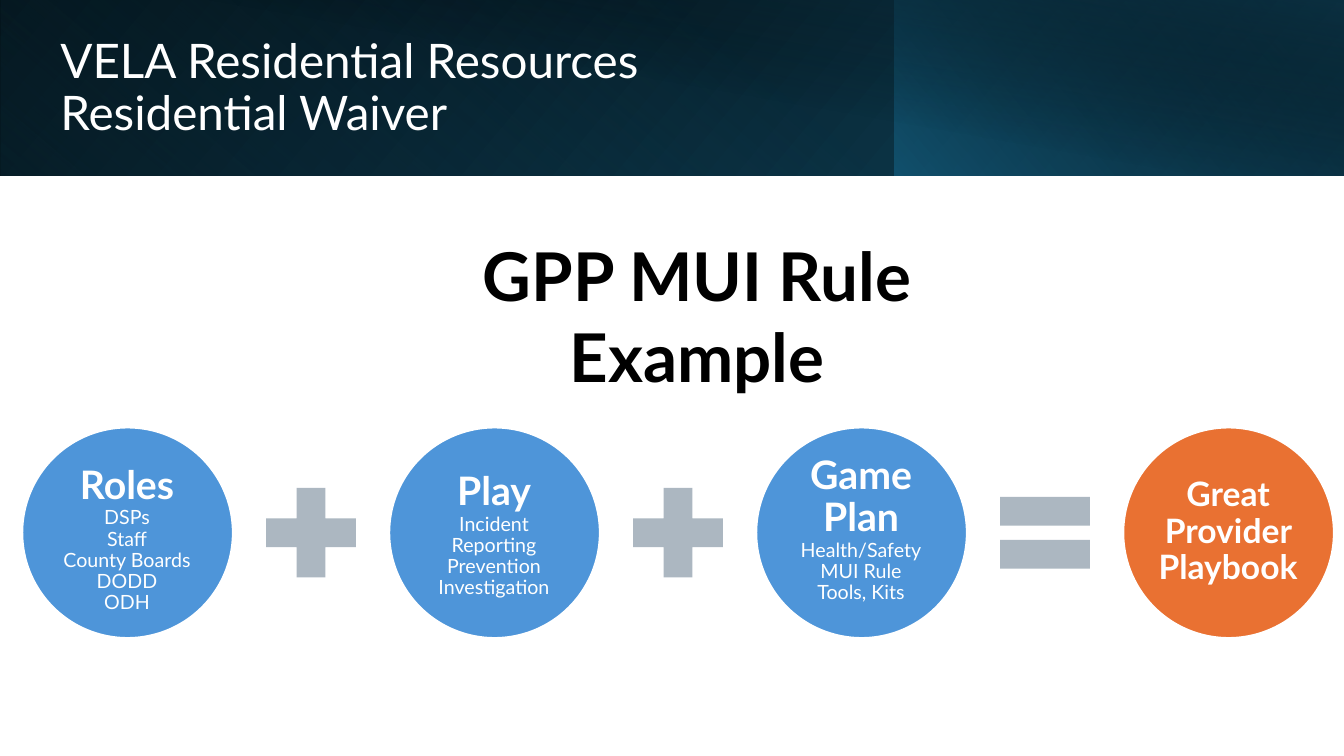
from dataclasses import dataclass

from lxml.etree import SubElement
from pptx import Presentation
from pptx.dml.color import RGBColor
from pptx.enum.shapes import MSO_SHAPE
from pptx.enum.text import MSO_ANCHOR, PP_ALIGN
from pptx.oxml.ns import qn
from pptx.shapes.autoshape import Shape
from pptx.slide import Slide
from pptx.util import Emu, Pt

EMU_PER_PX = 9144


@dataclass(frozen=True)
class Theme:
    font: str = "Lato"
    white: str = "FFFFFF"
    black: str = "000000"
    ocean: str = "156082"
    deep_ocean: str = "104862"
    midnight: str = "0B3041"
    blue: str = "4E95D9"
    orange: str = "E97132"
    grey: str = "ACB7C1"
    title_size: int = 34
    headline_size: int = 48
    term_size: int = 28
    result_size: int = 24
    detail_size: int = 14


THEME = Theme()


@dataclass(frozen=True)
class Box:
    left: int
    top: int
    width: int
    height: int

    def emu(self) -> tuple[Emu, ...]:
        lengths = (self.left, self.top, self.width, self.height)
        return tuple(Emu(length * EMU_PER_PX) for length in lengths)


@dataclass(frozen=True)
class Stop:
    position: float
    color: str
    opacity: int = 100


@dataclass(frozen=True)
class BannerLayer:
    box: Box
    stops: tuple[Stop, Stop]
    angle: int
    rotation: int = 0
    flipped: bool = True


@dataclass(frozen=True)
class Line:
    text: str
    size: int
    color: str = THEME.white
    bold: bool = False


@dataclass(frozen=True)
class Term:
    heading: Line
    details: tuple[str, ...]
    text_top: int
    fill: str = THEME.blue


BANNER_LAYERS = (
    BannerLayer(Box(0, 0, 1333, 174),
                (Stop(0, THEME.black), Stop(1, THEME.deep_ocean)), 220),
    BannerLayer(Box(0, 0, 888, 174),
                (Stop(0.2, THEME.ocean, 0), Stop(1, THEME.midnight, 55)), 130, rotation=180),
    BannerLayer(Box(887, 0, 446, 174),
                (Stop(0, THEME.ocean, 66), Stop(1, THEME.black, 30)), 140),
    BannerLayer(Box(50, 0, 1283, 174),
                (Stop(0.5, THEME.black, 0), Stop(0.99, THEME.midnight, 52)), 80, flipped=False),
)

TERMS = (
    Term(Line("Roles", THEME.term_size, bold=True),
         ("DSPs", "Staff", "County Boards", "DODD", "ODH"), 462),
    Term(Line("Play", THEME.term_size, bold=True),
         ("Incident", "Reporting", "Prevention", "Investigation"), 468),
    Term(Line("Game Plan", THEME.term_size, bold=True),
         ("Health/Safety", "MUI Rule", "Tools, Kits"), 452),
    Term(Line("Great Provider Playbook", THEME.result_size, bold=True),
         (), 474, THEME.orange),
)
OPERATORS = (MSO_SHAPE.MATH_PLUS, MSO_SHAPE.MATH_PLUS, MSO_SHAPE.MATH_EQUAL)

FIRST_CIRCLE = Box(22, 424, 209, 209)
FIRST_OPERATOR = Box(248, 468, 121, 121)
TERM_PITCH = 364
TEXT_INDENT = 30
TEXT_WIDTH = 148
TEXT_HEIGHT = 148


def add_plain_shape(slide: Slide, kind: MSO_SHAPE, box: Box) -> Shape:
    shape = slide.shapes.add_shape(kind, *box.emu())
    shape.shadow.inherit = False
    shape.line.fill.background()
    return shape


def add_solid_shape(slide: Slide, kind: MSO_SHAPE, box: Box, color: str) -> Shape:
    shape = add_plain_shape(slide, kind, box)
    shape.fill.solid()
    shape.fill.fore_color.rgb = RGBColor.from_string(color)
    return shape


def add_banner_layer(slide: Slide, layer: BannerLayer) -> None:
    shape = add_plain_shape(slide, MSO_SHAPE.RECTANGLE, layer.box)
    shape.rotation = layer.rotation
    shape.fill.gradient()
    shape.fill.gradient_angle = layer.angle
    for gradient_stop, stop in zip(shape.fill.gradient_stops, layer.stops):
        gradient_stop.position = stop.position
        gradient_stop.color.rgb = RGBColor.from_string(stop.color)
    # Opacity and mirroring are only reachable through XML
    properties = shape.element.spPr
    for color, stop in zip(properties.iter(qn("a:srgbClr")), layer.stops):
        SubElement(color, qn("a:alpha"), val=str(stop.opacity * 1000))
    if layer.flipped:
        properties.find(qn("a:xfrm")).set("flipH", "1")


def add_text(slide: Slide, box: Box, lines: list[Line], alignment: PP_ALIGN,
             anchor: MSO_ANCHOR = MSO_ANCHOR.TOP, spacing: float = 0.9,
             inset: int | None = None) -> None:
    frame = slide.shapes.add_textbox(*box.emu()).text_frame
    frame.word_wrap = True
    frame.vertical_anchor = anchor
    if inset is not None:
        margin = Emu(inset * EMU_PER_PX)
        frame.margin_left = frame.margin_right = margin
        frame.margin_top = frame.margin_bottom = Emu(0)
    for index, line in enumerate(lines):
        paragraph = frame.add_paragraph() if index else frame.paragraphs[0]
        paragraph.text = line.text
        paragraph.alignment = alignment
        paragraph.line_spacing = spacing
        paragraph.font.name = THEME.font
        paragraph.font.size = Pt(line.size)
        paragraph.font.bold = line.bold
        paragraph.font.color.rgb = RGBColor.from_string(line.color)


def add_term(slide: Slide, term: Term, offset: int) -> None:
    left = FIRST_CIRCLE.left + offset
    circle_box = Box(left, FIRST_CIRCLE.top, FIRST_CIRCLE.width, FIRST_CIRCLE.height)
    circle = add_solid_shape(slide, MSO_SHAPE.OVAL, circle_box, term.fill)
    circle.line.color.rgb = RGBColor.from_string(THEME.white)
    circle.line.width = Pt(1.5)
    lines = [term.heading, *(Line(detail, THEME.detail_size) for detail in term.details)]
    text_box = Box(left + TEXT_INDENT, term.text_top, TEXT_WIDTH, TEXT_HEIGHT)
    add_text(slide, text_box, lines, PP_ALIGN.CENTER, inset=3)


def main() -> None:
    presentation = Presentation()
    presentation.slide_width = Emu(1333 * EMU_PER_PX)
    presentation.slide_height = Emu(750 * EMU_PER_PX)
    slide = presentation.slides.add_slide(presentation.slide_layouts[6])

    # Banner and title
    for layer in BANNER_LAYERS:
        add_banner_layer(slide, layer)
    title = [Line(text, THEME.title_size)
             for text in ("VELA Residential Resources", "Residential Waiver")]
    add_text(slide, Box(50, 32, 1182, 113), title, PP_ALIGN.LEFT, MSO_ANCHOR.MIDDLE)

    # Headline
    headline = Line("GPP MUI Rule Example", THEME.headline_size, THEME.black, bold=True)
    add_text(slide, Box(381, 228, 621, 172), [headline], PP_ALIGN.CENTER, spacing=1.0)

    # Equation of circles and operators
    for index, term in enumerate(TERMS):
        add_term(slide, term, index * TERM_PITCH)
    for index, operator in enumerate(OPERATORS):
        left = FIRST_OPERATOR.left + index * TERM_PITCH
        box = Box(left, FIRST_OPERATOR.top, FIRST_OPERATOR.width, FIRST_OPERATOR.height)
        add_solid_shape(slide, operator, box, THEME.grey)

    presentation.save("out.pptx")


if __name__ == "__main__":
    main()
